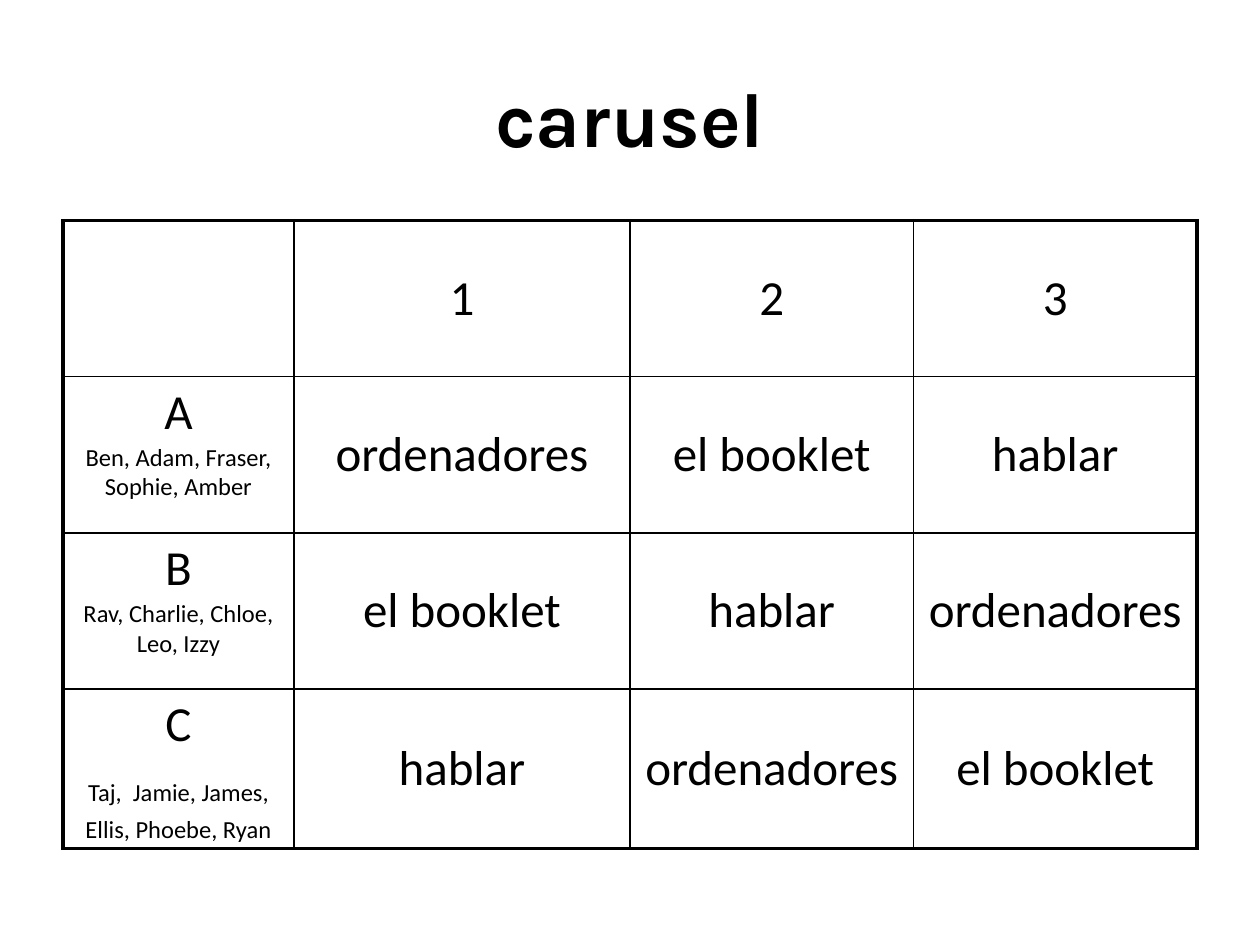
from lxml import etree
from pptx import Presentation
from pptx import util as u
from pptx.dml.color import RGBColor
from pptx.enum import text
from pptx.oxml.ns import qn

Pt = u.Pt
THEME = {
    "ink": "000000",
    "title": {"name": "Karla", "size": Pt(44), "bold": True},
    "entry": {"name": "Calibri", "size": Pt(28), "bold": False},
    "pupils": {"name": "Calibri", "size": Pt(14), "bold": False},
    "outer": Pt(2.25),
    "inner": Pt(1),
}


def add_run(paragraph, words, style):
    run = paragraph.add_run()
    run.text = words
    for attribute, value in THEME[style].items():
        setattr(run.font, attribute, value)
    run.font.color.rgb = RGBColor.from_string(THEME["ink"])


def add_border(cell, side, width):
    line = etree.SubElement(cell._tc.get_or_add_tcPr(), qn(f"a:ln{side}"), w=str(width))
    fill = etree.SubElement(line, qn("a:solidFill"))
    etree.SubElement(fill, qn("a:srgbClr"), val=THEME["ink"])


deck = Presentation()
deck.slide_width, deck.slide_height = Pt(720), Pt(540)
slide = deck.slides.add_slide(deck.slide_layouts[6])

# Title
title = slide.shapes.add_textbox(Pt(36), Pt(21.6), Pt(648), Pt(90)).text_frame
title.word_wrap = True
title.vertical_anchor = text.MSO_ANCHOR.MIDDLE
title.paragraphs[0].alignment = text.PP_ALIGN.CENTER
add_run(title.paragraphs[0], "carusel", "title")

# Rotation: each group's entries are (words, style) runs, None breaks the line
groups = {
    "A": [("Ben, Adam, Fraser, Sophie, Amber", "pupils")],
    "B": [("Rav, Charlie, Chloe, Leo, Izzy", "pupils")],
    "C": [("Taj,", "pupils"), (" ", "entry"),
          ("Jamie, James, Ellis, Phoebe, Ryan", "pupils")],
}
activities = ["ordenadores", "el booklet", "hablar"]
rows = [[[]] + [[(number, "entry")] for number in "123"]]
for shift, (letter, pupils) in enumerate(groups.items()):
    turns = activities[shift:] + activities[:shift]
    rows.append([[(letter, "entry"), None] + pupils]
                + [[(activity, "entry")] for activity in turns])

column_widths = [132, 192, 162, 162]
row_height = 89.25
rotation = slide.shapes.add_table(
    len(rows), len(column_widths), Pt(36), Pt(126),
    Pt(sum(column_widths)), Pt(row_height * len(rows))).table
rotation.first_row = rotation.horz_banding = False
for column, width in zip(rotation.columns, column_widths):
    column.width = Pt(width)

last_row, last_column = len(rows) - 1, len(column_widths) - 1
for r, row in enumerate(rows):
    rotation.rows[r].height = Pt(row_height)
    for c, runs in enumerate(row):
        cell = rotation.cell(r, c)
        on_edge = {"L": c == 0, "R": c == last_column, "T": r == 0, "B": r == last_row}
        for side, outside in on_edge.items():
            add_border(cell, side, THEME["outer" if outside else "inner"])
        cell.fill.background()
        cell.vertical_anchor = text.MSO_ANCHOR.MIDDLE if c else text.MSO_ANCHOR.TOP
        paragraph = cell.text_frame.paragraphs[0]
        paragraph.alignment = text.PP_ALIGN.CENTER
        paragraph.space_before = Pt(5.6)
        for part in runs:
            if part is None:
                paragraph.add_line_break()
            else:
                add_run(paragraph, *part)

deck.save("out.pptx")
